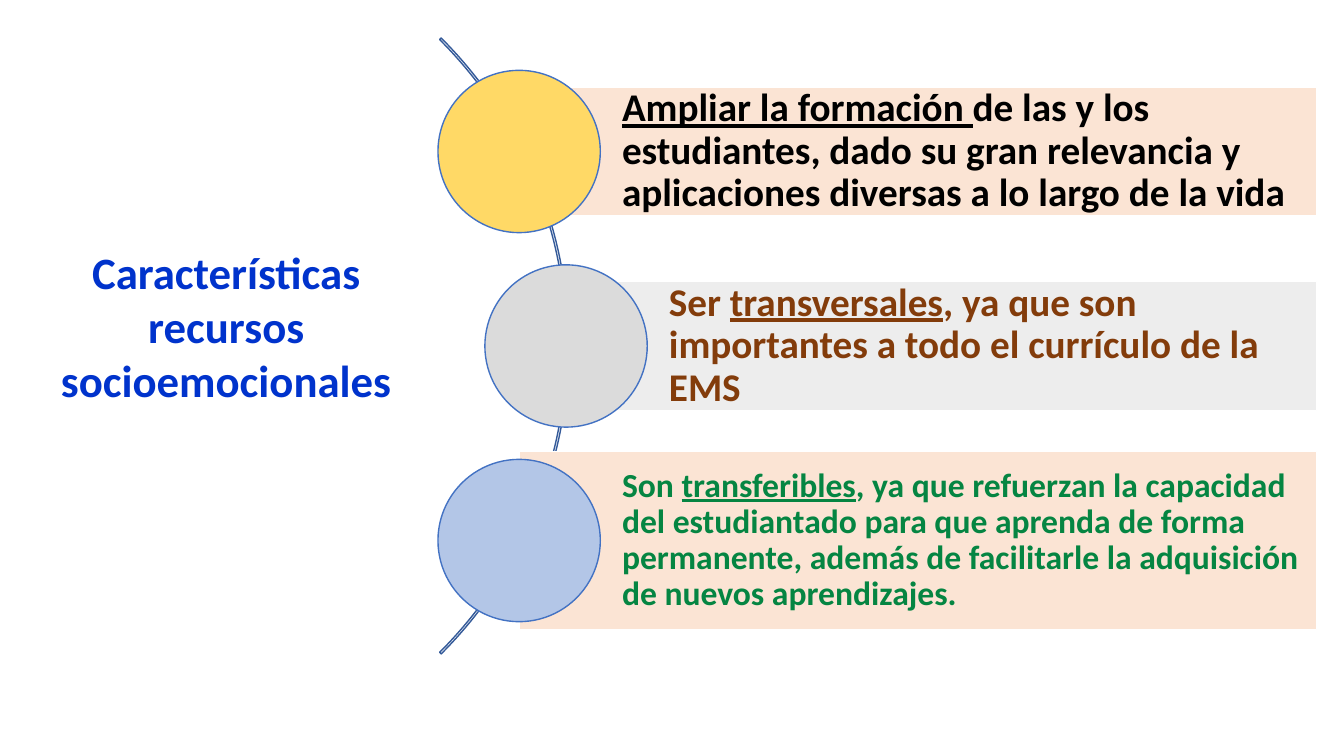
"""Build the slide on the traits of socio-emotional resources."""
from dataclasses import dataclass
from typing import Any

from pptx import Presentation
from pptx.dml.color import RGBColor
from pptx.enum.shapes import MSO_SHAPE as Kind
from pptx.enum.text import MSO_ANCHOR as Anchor, MSO_AUTO_SIZE as Fit, PP_ALIGN as Align
from pptx.util import Inches, Pt

WIDE, HIGH = Inches(13.33), Inches(7.5)
MID = 45.77
STEP = 25.73
EDGE = 97.94
DISC_W, DISC_H = 12.08, 21.47
ARC_W, ARC_H = 64.82, 115.2


@dataclass(frozen=True)
class Trait:
    """One bar with its disc; lengths are percent of the slide."""
    left: float
    tall: float
    bar: str
    disc: str
    ink: str
    size: int
    words: tuple[tuple[str, bool], ...]


TRAITS = (
    Trait(38.63, 17.07, "FBE4D4", "FFD966", "000000", 28, (
        ("Ampliar la formación ", True),
        ("de las y los estudiantes, dado su gran relevancia y "
         "aplicaciones diversas a lo largo de la vida", False))),
    Trait(42.12, 17.07, "EDEDED", "DBDBDB", "833C0B", 28, (
        ("Ser ", False), ("transversales", True),
        (", ya que son importantes a todo el currículo de la EMS", False))),
    Trait(38.63, 23.6, "FBE4D4", "B3C6E7", "058542", 24, (
        ("Son ", False), ("transferibles", True),
        (", ya que refuerzan la capacidad del estudiantado para que aprenda "
         "de forma permanente, además de facilitarle la adquisición de "
         "nuevos aprendizajes.", False))),
)


def color(code: str) -> RGBColor:
    """Turn a hex string into a colour."""
    return RGBColor.from_string(code)


def area(left: float, top: float, wide: float, tall: float) -> tuple[int, ...]:
    """Turn percent of the slide into a place and a size."""
    return (int(WIDE * left / 100), int(HIGH * top / 100),
            int(WIDE * wide / 100), int(HIGH * tall / 100))


def draw(slide: Any, kind: Kind, place: tuple[int, ...], line: str,
         fill: str = "") -> Any:
    """Add a flat shape with a thin line."""
    shape = slide.shapes.add_shape(kind, *place)
    shape.shadow.inherit = False
    if fill:
        shape.fill.solid()
        shape.fill.fore_color.rgb = color(fill)
    else:
        shape.fill.background()
    shape.line.color.rgb = color(line)
    shape.line.width = Pt(1)
    return shape


def style(run: Any, size: int, ink: str, under: bool = False) -> None:
    """Format one run of bold text."""
    font = run.font
    font.name, font.size, font.bold = "Calibri", Pt(size), True
    font.underline = under
    font.color.rgb = color(ink)


def add_arc(slide: Any) -> None:
    """Draw the thin arc behind the discs."""
    arc = draw(slide, Kind.BLOCK_ARC,
               area(-22.5, MID - ARC_H / 2, ARC_W, ARC_H), "345A99")
    for spot, value in enumerate((189, 27, 0.0025)):
        arc.adjustments[spot] = value


def add_trait(slide: Any, trait: Trait, mid: float) -> None:
    """Draw a bar with its text and the disc on its left end."""
    bar = draw(slide, Kind.RECTANGLE,
               area(trait.left, mid - trait.tall / 2, EDGE - trait.left, trait.tall),
               "FFFFFF", trait.bar)
    frame = bar.text_frame
    frame.word_wrap = True
    frame.vertical_anchor = Anchor.MIDDLE
    frame.margin_left = Inches(1.02)
    frame.margin_right = frame.margin_top = frame.margin_bottom = Inches(trait.size / 350)
    para = frame.paragraphs[0]
    para.alignment = Align.LEFT
    para.line_spacing = 0.9
    for text, under in trait.words:
        run = para.add_run()
        run.text = text
        style(run, trait.size, trait.ink, under)
    draw(slide, Kind.OVAL,
         area(trait.left - DISC_W / 2, mid - DISC_H / 2, DISC_W, DISC_H),
         "4372C3", trait.disc)


def add_title(slide: Any) -> None:
    """Write the title on the left."""
    frame = slide.shapes.add_textbox(*area(3.15, 31.73, 27.38, 22.93)).text_frame
    frame.word_wrap = True
    frame.auto_size = Fit.SHAPE_TO_FIT_TEXT
    frame.text = "Características recursos socioemocionales"
    para = frame.paragraphs[0]
    para.alignment = Align.CENTER
    style(para.runs[0], 32, "0033CC")


def main() -> None:
    """Build and save the deck."""
    deck = Presentation()
    deck.slide_width, deck.slide_height = WIDE, HIGH
    slide = deck.slides.add_slide(deck.slide_layouts[6])
    add_arc(slide)
    for row, trait in enumerate(TRAITS):
        add_trait(slide, trait, MID + (row - 1) * STEP)
    add_title(slide)
    deck.save("out.pptx")


if __name__ == "__main__":
    main()
